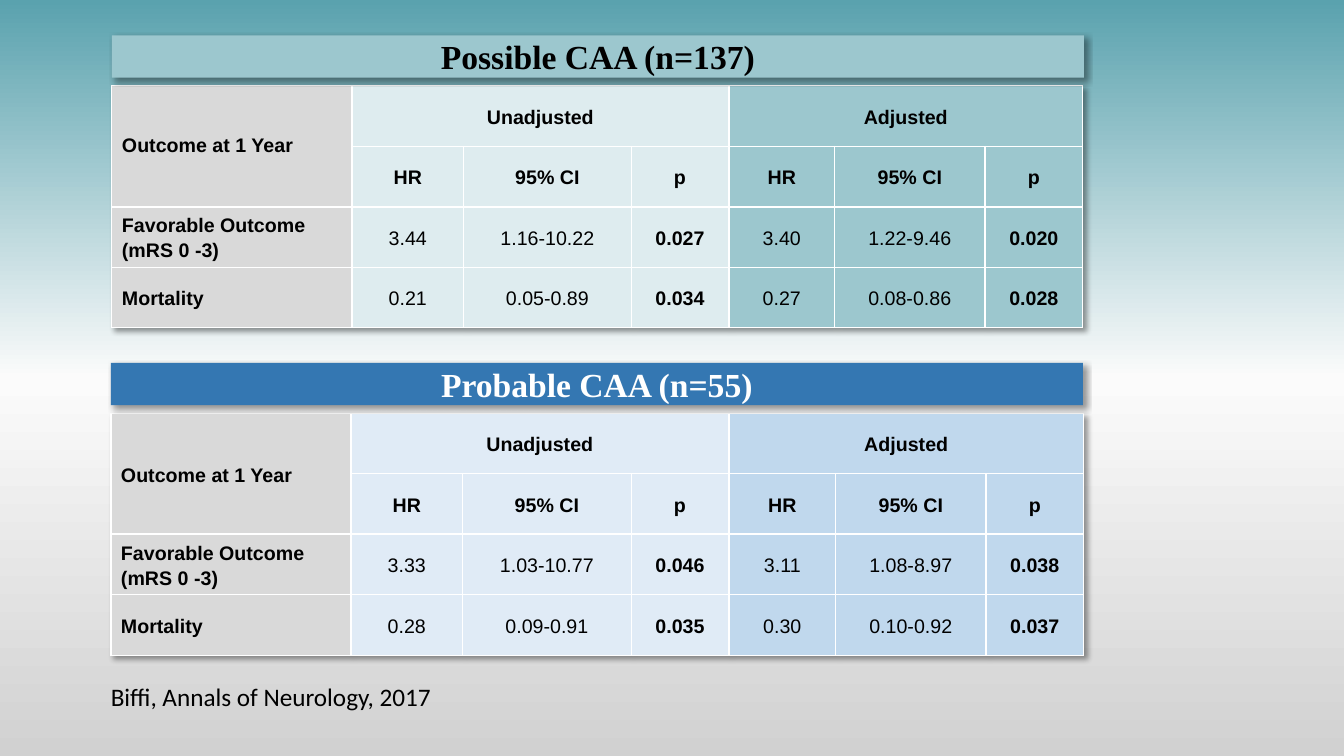
"""Build a slide with two outcome tables for possible and probable CAA."""
from copy import deepcopy
from dataclasses import dataclass

from lxml import etree
from pptx import Presentation
from pptx.dml.color import RGBColor
from pptx.enum import shapes, text
from pptx.oxml import parse_xml
from pptx.oxml.ns import nsdecls
from pptx.util import Inches, Pt


@dataclass(frozen=True)
class Theme:
    """Colours, fonts and sizes of the slide."""
    black: str = "000000"
    white: str = "FFFFFF"
    label_fill: str = "D9D9D9"
    background: tuple[tuple[float, str], ...] = ((0, "5AA2AE"), (0.5, "FBFBFB"), (1, "D1D1D1"))
    banner_font: str = "Times New Roman"
    table_font: str = "Arial"
    citation_font: str = "Calibri"
    banner_size: int = 24
    table_size: int = 14
    citation_size: int = 18
    line_spacing: float = 1.15
    thin: float = 1
    thick: float = 1.5


@dataclass(frozen=True)
class Panel:
    """A banner with the outcome table below it."""
    title: str
    left: float
    top: float
    banner_fill: str
    banner_color: str
    unadjusted_fill: str
    adjusted_fill: str
    corner_spacing: float
    widths: tuple[float, ...]
    favorable: tuple[str, ...]
    mortality: tuple[str, ...]


THEME = Theme()
PANELS = (
    Panel("Possible CAA (n=137)", 1.11, 0.35, "9CC7CE", THEME.black, "DEECEF", "9CC7CE", 1,
          (2.38, 1.11, 1.66, 0.97, 1.05, 1.49, 0.97),
          ("3.44", "1.16-10.22", "0.027", "3.40", "1.22-9.46", "0.020"),
          ("0.21", "0.05-0.89", "0.034", "0.27", "0.08-0.86", "0.028")),
    Panel("Probable CAA (n=55)", 1.1, 3.6, "3477B2", THEME.white, "E0EBF6", "C0D8ED",
          THEME.line_spacing, (2.38, 1.11, 1.67, 0.97, 1.06, 1.49, 0.97),
          ("3.33", "1.03-10.77", "0.046", "3.11", "1.08-8.97", "0.038"),
          ("0.28", "0.09-0.91", "0.035", "0.30", "0.10-0.92", "0.037")),
)
MEASURES = ("HR", "95% CI", "p")
BANNER_WIDTH, BANNER_HEIGHT = 9.64, 0.42
TABLE_OFFSET, ROW_HEIGHT = 0.5, 0.6
GROUP_COLUMNS = (1, 4)
FIRST_DATA_ROW = 2


def style_paragraph(para, font: str, size: int, color: str, bold: bool = False) -> None:
    """Format every run of a paragraph."""
    for span in para.runs:
        span.font.name = font
        span.font.size = Pt(size)
        span.font.bold = bold
        span.font.color.rgb = RGBColor.from_string(color)


def add_shadow(effects) -> None:
    """Append a soft outer shadow to an effect list."""
    effects.append(parse_xml(
        f'<a:outerShdw {nsdecls("a")} blurRad="{Pt(4)}" dist="{Pt(3)}" dir="2700000" '
        f'algn="tl" rotWithShape="0"><a:srgbClr val="{THEME.black}">'
        '<a:alpha val="40000"/></a:srgbClr></a:outerShdw>'))


def paint_background(page) -> None:
    """Fill the page with the vertical three-colour gradient."""
    fill = page.background.fill
    fill.gradient()
    fill.gradient_angle = 270
    stop_list = page.element.xpath(".//p:bg//a:gsLst")[0]
    stop_list.append(deepcopy(stop_list[0]))
    for stop, (position, color) in zip(fill.gradient_stops, THEME.background):
        stop.position = position
        stop.color.rgb = RGBColor.from_string(color)


def add_borders(cell, row: int, column: int) -> None:
    """Draw white cell borders, thicker around column groups and below the head."""
    bottom = row + (cell.span_height if cell.is_merge_origin else 1)
    right = column + (cell.span_width if cell.is_merge_origin else 1)
    sides = (("L", column in GROUP_COLUMNS), ("R", right in GROUP_COLUMNS),
             ("T", row == FIRST_DATA_ROW), ("B", bottom == FIRST_DATA_ROW))
    properties = cell._tc.get_or_add_tcPr()
    for index, (side, heavy) in enumerate(sides):
        width = Pt(THEME.thick if heavy else THEME.thin)
        properties.insert(index, parse_xml(
            f'<a:ln{side} {nsdecls("a")} w="{width}"><a:solidFill>'
            f'<a:srgbClr val="{THEME.white}"/></a:solidFill></a:ln{side}>'))


def fill_cell(cell, panel: Panel, row: int, column: int, content: str) -> None:
    """Write and format one table cell."""
    is_label = column == 0
    cell.text_frame.text = content
    cell.vertical_anchor = text.MSO_ANCHOR.MIDDLE
    cell.margin_left = Inches(0.1 if is_label else 0.04)
    cell.margin_right = Inches(0.04)
    cell.margin_top = cell.margin_bottom = 0
    group_fill = panel.unadjusted_fill if column < GROUP_COLUMNS[1] else panel.adjusted_fill
    cell.fill.solid()
    cell.fill.fore_color.rgb = RGBColor.from_string(THEME.label_fill if is_label else group_fill)
    bold = row < FIRST_DATA_ROW or column % len(MEASURES) == 0
    for para in cell.text_frame.paragraphs:
        para.alignment = text.PP_ALIGN.LEFT if is_label else text.PP_ALIGN.CENTER
        para.line_spacing = panel.corner_spacing if row == column == 0 else THEME.line_spacing
        style_paragraph(para, THEME.table_font, THEME.table_size, THEME.black, bold)
    add_borders(cell, row, column)


def add_outcome_table(page, panel: Panel) -> None:
    """Add the outcome table of a panel."""
    rows = (
        ("Outcome at 1 Year", "Unadjusted", "", "", "Adjusted", "", ""),
        ("", *MEASURES, *MEASURES),
        ("Favorable Outcome\n(mRS 0 -3)", *panel.favorable),
        ("Mortality", *panel.mortality),
    )
    frame = page.shapes.add_table(
        len(rows), len(panel.widths), Inches(panel.left), Inches(panel.top + TABLE_OFFSET),
        Inches(sum(panel.widths)), Inches(ROW_HEIGHT * len(rows)))
    table = frame.table
    table.first_row = table.horz_banding = False
    effects = parse_xml(f'<a:effectLst {nsdecls("a")}/>')
    add_shadow(effects)
    table._tbl.tblPr.insert(0, effects)
    for column, width in zip(table.columns, panel.widths):
        column.width = Inches(width)
    for row in table.rows:
        row.height = Inches(ROW_HEIGHT)
    table.cell(0, 0).merge(table.cell(1, 0))
    for first in GROUP_COLUMNS:
        table.cell(0, first).merge(table.cell(0, first + len(MEASURES) - 1))
    for row_index, contents in enumerate(rows):
        for column_index, content in enumerate(contents):
            fill_cell(table.cell(row_index, column_index), panel, row_index, column_index, content)


def add_banner(page, panel: Panel) -> None:
    """Add the title bar of a panel."""
    banner = page.shapes.add_shape(
        shapes.MSO_SHAPE.RECTANGLE, Inches(panel.left), Inches(panel.top),
        Inches(BANNER_WIDTH), Inches(BANNER_HEIGHT))
    banner.fill.solid()
    banner.fill.fore_color.rgb = RGBColor.from_string(panel.banner_fill)
    banner.line.fill.background()
    banner.shadow.inherit = False
    add_shadow(banner.element.xpath("./p:spPr/a:effectLst")[0])
    banner.text_frame.text = panel.title
    banner.text_frame.vertical_anchor = text.MSO_ANCHOR.MIDDLE
    para = banner.text_frame.paragraphs[0]
    para.alignment = text.PP_ALIGN.CENTER
    style_paragraph(para, THEME.banner_font, THEME.banner_size, panel.banner_color, True)


def add_citation(page, citation: str) -> None:
    """Add the citation below the tables."""
    box = page.shapes.add_textbox(Inches(1), Inches(6.71), Inches(4.02), Inches(0.4))
    frame = box.text_frame
    frame.word_wrap = True
    frame.auto_size = text.MSO_AUTO_SIZE.SHAPE_TO_FIT_TEXT
    frame.text = citation
    style_paragraph(frame.paragraphs[0], THEME.citation_font, THEME.citation_size, THEME.black)


def main() -> None:
    """Build and save the deck."""
    deck = Presentation()
    deck.slide_width, deck.slide_height = Inches(13.33), Inches(7.5)
    page = deck.slides.add_slide(deck.slide_layouts[6])
    paint_background(page)
    for panel in PANELS:
        add_outcome_table(page, panel)
        add_banner(page, panel)
    add_citation(page, "Biffi, Annals of Neurology, 2017")
    deck.save("out.pptx")


if __name__ == "__main__":
    main()
